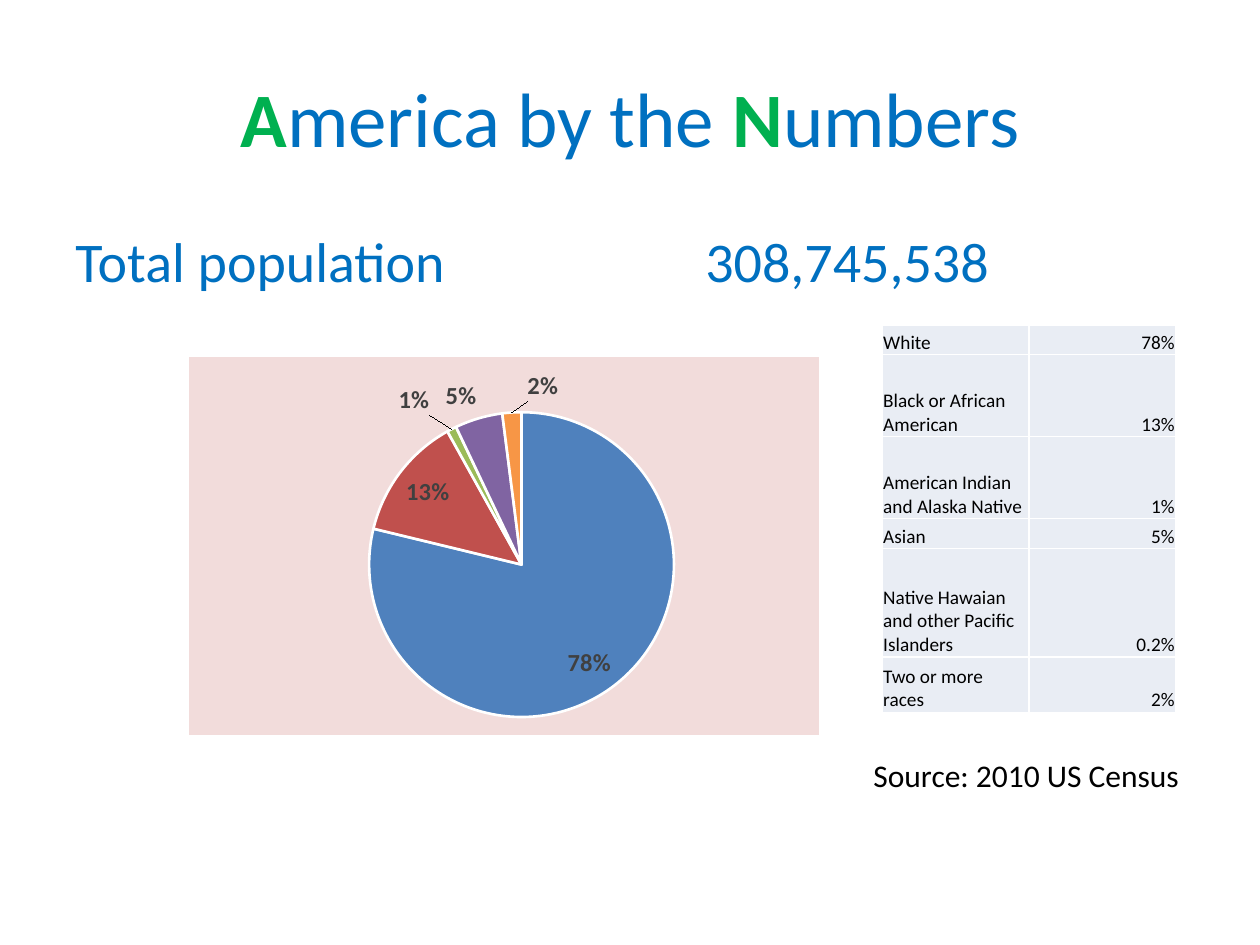
import pptx
import pptx.util
import pptx.chart.data
import pptx.dml.color
import pptx.enum.chart
import pptx.enum.text
import pptx.oxml
import pptx.oxml.ns

FONT = "Calibri"
UNIT = pptx.util.Inches(10) // 60  # the slide is a grid of 60 columns by 45 rows
HUES = {
    "blue": "0070C0", "green": "00B050", "black": "000000", "white": "FFFFFF",
    "gray": "404040", "pink": "F2DCDB", "cell": "E9EDF4",
}
SLICES = ["4F81BD", "C0504D", "9BBB59", "8064A2", "4BACC6", "F79646"]
SHARES = [0.78, 0.13, 0.01, 0.05, 0, 0.02]
RACES = [  # label, share, row height in grid rows
    ("White", "78%", 1.38),
    ("Black or African American", "13%", 3.9),
    ("American Indian and Alaska Native", "1%", 3.9),
    ("Asian", "5%", 1.44),
    ("Native Hawaian and other Pacific Islanders", "0.2%", 5.16),
    ("Two or more races", "2%", 2.64),
]
ALIGN = pptx.enum.text.PP_ALIGN
ANCHOR = pptx.enum.text.MSO_ANCHOR
NS = pptx.oxml.ns.nsdecls("a", "c")


def rgb(code):
    return pptx.dml.color.RGBColor.from_string(code)


def span(*cells):
    return [round(cell * UNIT) for cell in cells]


def style(font, size, hue, bold=False):
    font.name = FONT
    font.size = pptx.util.Pt(size)
    font.bold = bold
    font.color.rgb = rgb(HUES[hue])


def write(frame, *runs, size=18, hue="black", accent=None, align=ALIGN.LEFT, tab=None):
    """Fill the first paragraph; every other run, from the first, is accented if asked."""
    para = frame.paragraphs[0]
    para.alignment = align
    if tab:
        para._p.get_or_add_pPr().append(pptx.oxml.parse_xml(
            f'<a:tabLst {NS}><a:tab pos="{round(tab * UNIT)}" algn="l"/></a:tabLst>'))
    for i, text in enumerate(runs):
        run = para.add_run()
        run.text = text
        strong = bool(accent) and i % 2 == 0
        style(run.font, size, accent if strong else hue, strong)


def add_title(slide, box):
    title = slide.shapes.title
    title.left, title.top, title.width, title.height = span(*box)
    title.text_frame.vertical_anchor = ANCHOR.MIDDLE
    write(title.text_frame, "A", "merica by the ", "N", "umbers",
          size=44, hue="blue", accent="green", align=ALIGN.CENTER)


def add_text(slide, box, text, **form):
    frame = slide.shapes.add_textbox(*span(*box)).text_frame
    frame.word_wrap = True
    write(frame, text, **form)


def add_pie(slide, box):
    data = pptx.chart.data.CategoryChartData(number_format="0%")
    data.categories = [str(n + 1) for n in range(len(SHARES))]
    data.add_series("Series 1", SHARES)
    chart = slide.shapes.add_chart(
        pptx.enum.chart.XL_CHART_TYPE.PIE, *span(*box), data).chart
    chart.has_legend = chart.has_title = False
    style(chart.font, 10, "black")
    chart._chartSpace.chart.addnext(pptx.oxml.parse_xml(
        f'<c:spPr {NS}><a:solidFill><a:srgbClr val="{HUES["pink"]}"/></a:solidFill>'
        '<a:ln><a:noFill/></a:ln></c:spPr>'))
    area = chart._chartSpace.chart.plotArea
    for old in area.findall(pptx.oxml.ns.qn("c:layout")):
        area.remove(old)
    area.insert(0, layout(x=0.286, y=0.146, w=0.484, h=0.807))

    plot = chart.plots[0]
    plot.vary_by_categories = True
    series = plot.series[0]
    labels = series.data_labels
    labels.show_value = True
    labels.number_format = "0%"
    labels.number_format_is_linked = False
    style(labels.font, 14, "gray", True)
    place = pptx.enum.chart.XL_LABEL_POSITION
    shifts = {2: (-0.03, -0.02), 5: (0.05, -0.01)}
    for i, code in enumerate(SLICES):
        point = series.points[i]
        point.format.fill.solid()
        point.format.fill.fore_color.rgb = rgb(code)
        point.format.line.color.rgb = rgb(HUES["white"])
        point.format.line.width = pptx.util.Pt(1.5)
        label = point.data_label
        style(label.font, 14, "gray", True)
        label.position = place.INSIDE_END if SHARES[i] > 0.1 else place.OUTSIDE_END
        if i in shifts:
            x, y = shifts[i]
            label._get_or_add_dLbl().insert(1, layout(x=x, y=y))


def layout(**parts):
    """Manual chart layout: a full inner plot box, or just a label's shift."""
    modes = ('<c:layoutTarget val="inner"/><c:xMode val="edge"/><c:yMode val="edge"/>'
             if "w" in parts else "")
    sizes = "".join(f'<c:{key} val="{val}"/>' for key, val in parts.items())
    return pptx.oxml.parse_xml(
        f"<c:layout {NS}><c:manualLayout>{modes}{sizes}</c:manualLayout></c:layout>")


def add_table(slide, box):
    table = slide.shapes.add_table(len(RACES), 2, *span(*box)).table
    table.first_row = table.horz_banding = False
    for row, (name, share, height) in zip(table.rows, RACES):
        row.height = round(height * UNIT)
        for cell, text, align in zip(row.cells, (name, share), (ALIGN.LEFT, ALIGN.RIGHT)):
            cell.margin_left = cell.margin_right = cell.margin_top = pptx.util.Inches(0.01)
            cell.margin_bottom = 0
            cell.vertical_anchor = ANCHOR.BOTTOM
            write(cell.text_frame, text, size=11, align=align)
            props = cell._tc.get_or_add_tcPr()
            for side in "LRTB":
                props.append(pptx.oxml.parse_xml(
                    f'<a:ln{side} {NS} w="12700"><a:solidFill>'
                    f'<a:srgbClr val="{HUES["white"]}"/></a:solidFill></a:ln{side}>'))
            cell.fill.solid()
            cell.fill.fore_color.rgb = rgb(HUES["cell"])


def main():
    deck = pptx.Presentation()
    deck.slide_width, deck.slide_height = span(60, 45)
    slide = deck.slides.add_slide(deck.slide_layouts[5])
    add_title(slide, (3, 1.8, 54, 7.5))
    add_text(slide, (3, 10.5, 54, 4), "Total population\t308,745,538",
             size=32, hue="blue", tab=30)
    add_pie(slide, (9, 17, 30, 18))
    add_table(slide, (42, 15.5, 14, 18.4))
    add_text(slide, (41, 35.7, 16, 2.4), "Source: 2010 US Census")
    deck.save("out.pptx")


if __name__ == "__main__":
    main()
